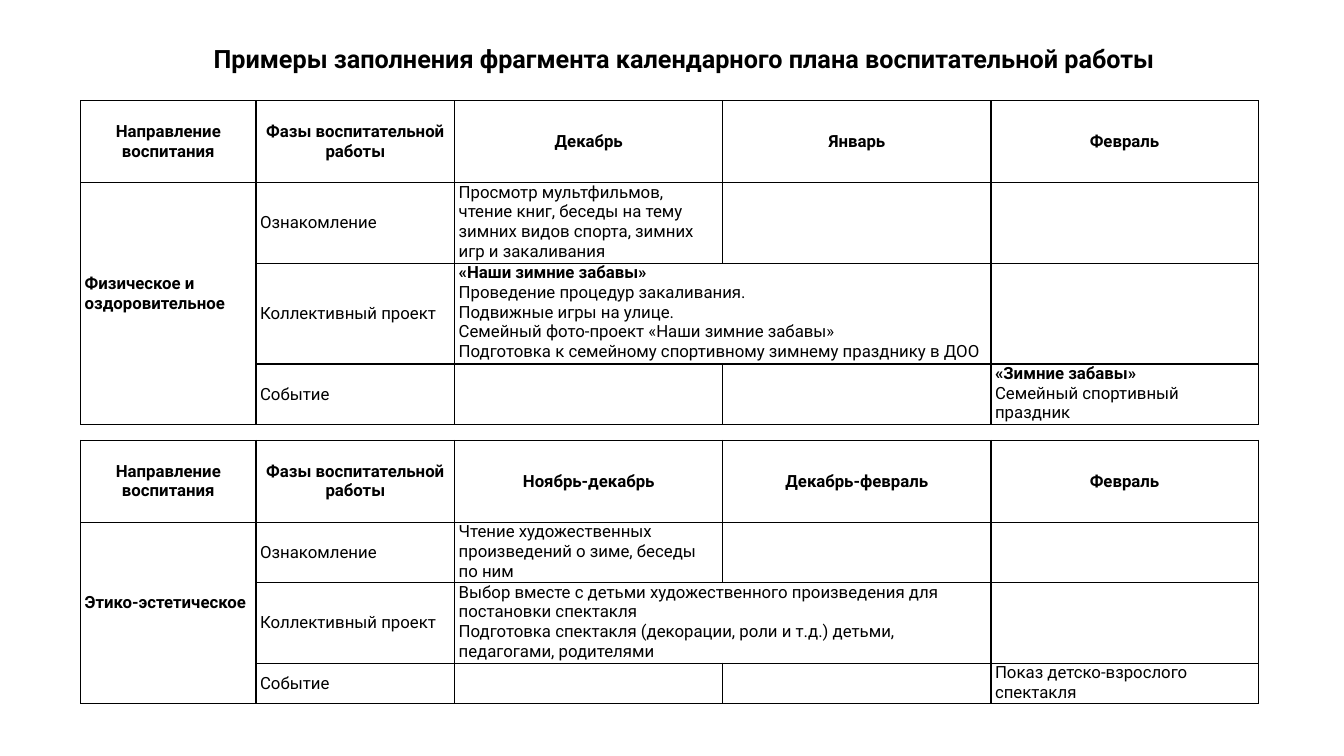
from lxml import etree
from pptx import Presentation
from pptx.dml.color import RGBColor
from pptx.enum.text import MSO_ANCHOR, MSO_AUTO_SIZE, PP_ALIGN
from pptx.oxml.ns import qn
from pptx.util import Inches, Pt

BLACK = RGBColor(0, 0, 0)
LEFT, CENTER = PP_ALIGN.LEFT, PP_ALIGN.CENTER
TOP, MIDDLE = MSO_ANCHOR.TOP, MSO_ANCHOR.MIDDLE
GROW = MSO_AUTO_SIZE.SHAPE_TO_FIT_TEXT

TABLE_LEFT = 0.8
COLUMN_WIDTHS = [1.74, 1.97, 2.66, 2.66, 2.65]
PHASES = ["Ознакомление", "Коллективный проект", "Событие"]

PLANS = [
    {
        "top": 1,
        "heights": [0.81, 0.8, 1, 0.6],
        "months": ["Декабрь", "Январь", "Февраль"],
        "direction": "Физическое и оздоровительное",
        "intro": "Просмотр мультфильмов, чтение книг, беседы на тему "
                 "зимних видов спорта, зимних игр и закаливания",
        "project": "«Наши зимние забавы»\n"
                   "Проведение процедур закаливания.\n"
                   "Подвижные игры на улице.\n"
                   "Семейный фото-проект «Наши зимние забавы»\n"
                   "Подготовка к семейному спортивному зимнему празднику в ДОО",
        "event": "«Зимние забавы»\nСемейный спортивный праздник",
        "titled": True,
    },
    {
        "top": 4.37,
        "heights": [0.81, 0.6, 0.8, 0.4],
        "months": ["Ноябрь-декабрь", "Декабрь-февраль", "Февраль"],
        "direction": "Этико-эстетическое",
        "intro": "Чтение художественных произведений о зиме, беседы по ним",
        "project": "Выбор вместе с детьми художественного произведения "
                   "для постановки спектакля\n"
                   "Подготовка спектакля (декорации, роли и т.д.) детьми, "
                   "педагогами, родителями",
        "event": "Показ детско-взрослого спектакля",
        "titled": False,
    },
]


class PlanSlide:
    font = "Roboto"
    title_size = 18
    cell_size = 12
    border_width = 1

    def __init__(self, slide):
        self.slide = slide

    def format(self, p, size, bold, align):
        p.alignment = align
        for r in p.runs:
            r.font.name = self.font
            r.font.size = Pt(size)
            r.font.bold = bold
            r.font.color.rgb = BLACK

    def title(self, text, left, top, width, height):
        sp = self.slide.shapes.add_textbox(
            Inches(left), Inches(top), Inches(width), Inches(height))
        tf = sp.text_frame
        tf.word_wrap = True
        tf.auto_size = GROW
        tf.text = text
        p = tf.paragraphs[0]
        p.space_after = Pt(6)
        self.format(p, self.title_size, True, CENTER)

    def border(self, cell):
        tc_pr = cell._tc.get_or_add_tcPr()
        for i, side in enumerate(("a:lnL", "a:lnR", "a:lnT", "a:lnB")):
            ln = etree.Element(qn(side), w=str(Pt(self.border_width)))
            fill = etree.SubElement(ln, qn("a:solidFill"))
            etree.SubElement(fill, qn("a:srgbClr"), val=str(BLACK))
            tc_pr.insert(i, ln)

    def cell_text(self, cell, text, bold_lines=0, align=LEFT, anchor=MIDDLE):
        cell.text = text
        cell.vertical_anchor = anchor
        for i, p in enumerate(cell.text_frame.paragraphs):
            self.format(p, self.cell_size, i < bold_lines, align)

    def grid(self, top, heights):
        shape = self.slide.shapes.add_table(
            len(heights), len(COLUMN_WIDTHS), Inches(TABLE_LEFT), Inches(top),
            Inches(sum(COLUMN_WIDTHS)), Inches(sum(heights)))
        table = shape.table
        table.first_row = table.horz_banding = False
        for column, width in zip(table.columns, COLUMN_WIDTHS):
            column.width = Inches(width)
        for row, height in zip(table.rows, heights):
            row.height = Inches(height)
        for cell in table.iter_cells():
            cell.margin_left = cell.margin_right = Inches(0.04)
            cell.margin_top = cell.margin_bottom = 0
            cell.fill.background()
            self.border(cell)
        return table

    def plan(self, plan):
        table = self.grid(plan["top"], plan["heights"])
        direction = table.cell(1, 0)
        direction.merge(table.cell(3, 0))
        project = table.cell(2, 2)
        project.merge(table.cell(2, 3))

        headings = ["Направление воспитания", "Фазы воспитательной работы"]
        for col, heading in enumerate(headings + plan["months"]):
            self.cell_text(table.cell(0, col), heading, 1, CENTER)
        for row, phase in enumerate(PHASES, 1):
            self.cell_text(table.cell(row, 1), phase)

        self.cell_text(direction, plan["direction"], 1)
        direction.margin_bottom = Inches(0.2)
        bold_lines = int(plan["titled"])
        self.cell_text(table.cell(1, 2), plan["intro"], anchor=TOP)
        self.cell_text(project, plan["project"], bold_lines, anchor=TOP)
        self.cell_text(table.cell(3, 4), plan["event"], bold_lines, anchor=TOP)


def main():
    prs = Presentation()
    prs.slide_width = Inches(13.33)
    prs.slide_height = Inches(7.5)
    s = PlanSlide(prs.slides.add_slide(prs.slide_layouts[6]))
    s.title("Примеры заполнения фрагмента календарного плана "
            "воспитательной работы", 0.9, 0.38, 11.77, 0.4)
    for plan in PLANS:
        s.plan(plan)
    prs.save("out.pptx")


if __name__ == "__main__":
    main()
